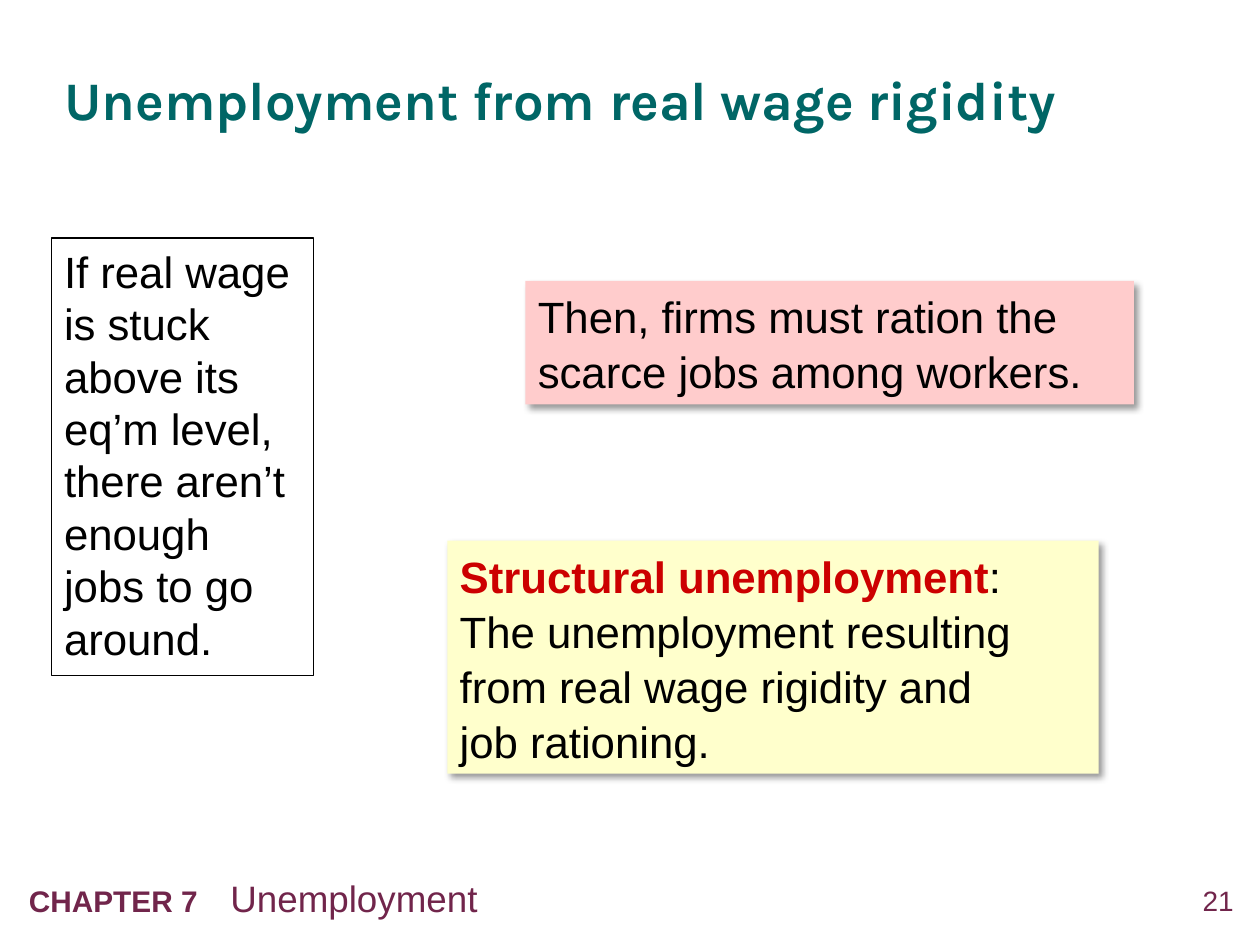
from lxml import etree
from pptx import Presentation
from pptx.dml.color import RGBColor
from pptx.enum import shapes, text
from pptx.oxml import parse_xml
from pptx.oxml.ns import nsdecls, qn
from pptx.util import Inches, Pt

SHADOW = (
    f'<a:effectLst {nsdecls("a")}><a:outerShdw blurRad="50800" dist="38100" '
    'dir="2700000" algn="tl" rotWithShape="0"><a:srgbClr val="000000">'
    '<a:alpha val="40000"/></a:srgbClr></a:outerShdw></a:effectLst>'
)


def color(code):
    return RGBColor.from_string(code)


def add_span(para, words, size, code, bold=False, name="Arial"):
    span = para.add_run()
    span.text = words
    formats = {"name": name, "size": Pt(size), "bold": bold}
    for attribute, value in formats.items():
        setattr(span.font, attribute, value)
    span.font.color.rgb = color(code)


deck = Presentation()
deck.slide_width, deck.slide_height = Inches(10), Inches(7.5)
page = deck.slides.add_slide(deck.slide_layouts[5])
no_margins = dict.fromkeys(
    ("margin_left", "margin_top", "margin_right", "margin_bottom"), 0)

# Title
title = page.shapes.title
place = {"left": 0.51, "top": 0.26, "width": 9.02, "height": 1.03}
for attribute, value in place.items():
    setattr(title, attribute, Inches(value))
frame = title.text_frame
for attribute, value in no_margins.items():
    setattr(frame, attribute, value)
frame.vertical_anchor = text.MSO_ANCHOR.MIDDLE
para = frame.paragraphs[0]
para.alignment = text.PP_ALIGN.LEFT
para.line_spacing = 1.05
add_span(para, "Unemployment from real wage rigidity", 31, "006666", True, "Karla")

# Boxes: place, fill, outlined, lines of (words, colour, bold) spans
boxes = [
    ((4.17, 2.23, 4.83, 0.98), "FFCCCC", False,
     [[("Then, firms must ration the scarce jobs among workers.", "000000", False)]]),
    ((3.55, 4.29, 5.17, 1.85), "FFFFCC", False,
     [[("Structural unemployment", "CC0000", True), (":", "000000", False)],
      [("The unemployment resulting from real wage rigidity and", "000000", False)],
      [("job rationing.", "000000", False)]]),
    ((0.41, 1.89, 2.08, 3.47), "FFFFFF", True,
     [[("If real wage is stuck above its eq’m level, there aren’t enough "
        "jobs to go around.", "000000", False)]]),
]
for place, fill, outlined, lines in boxes:
    box = page.shapes.add_shape(shapes.MSO_SHAPE.RECTANGLE, *map(Inches, place))
    box.fill.solid()
    box.fill.fore_color.rgb = color(fill)
    para = box.text_frame.paragraphs[0]
    if outlined:
        box.line.color.rgb = color("000000")
        box.line.width = Pt(0.75)
        box.shadow.inherit = False
    else:
        box.line.fill.background()
        box._element.spPr.append(parse_xml(SHADOW))
        para.line_spacing = 1.05
    box.text_frame.word_wrap = True
    box.text_frame.vertical_anchor = text.MSO_ANCHOR.TOP
    para.alignment = text.PP_ALIGN.LEFT
    for number, line in enumerate(lines):
        if number:
            para.add_line_break()
        for words, code, bold in line:
            add_span(para, words, 25, code, bold)

# Footer: chapter name, with a tab stop before the topic
footer = page.shapes.add_textbox(*map(Inches, (0.13, 6.9, 8.18, 0.45)))
footer.text_frame.word_wrap = True
para = footer.text_frame.paragraphs[0]
tabs = etree.SubElement(para._p.get_or_add_pPr(), qn("a:tabLst"))
etree.SubElement(tabs, qn("a:tab"), pos=str(Inches(1.6)), algn="l")
add_span(para, "CHAPTER 7\t", 17, "71254B", True)
add_span(para, "Unemployment", 21, "71254B")

# Page number
number_box = page.shapes.add_textbox(*map(Inches, (9.24, 7.01, 0.55, 0.32)))
frame = number_box.text_frame
frame.word_wrap = True
for attribute, value in no_margins.items():
    setattr(frame, attribute, value)
para = frame.paragraphs[0]
para.alignment = text.PP_ALIGN.RIGHT
add_span(para, "21", 16, "71254B")

deck.save("out.pptx")
